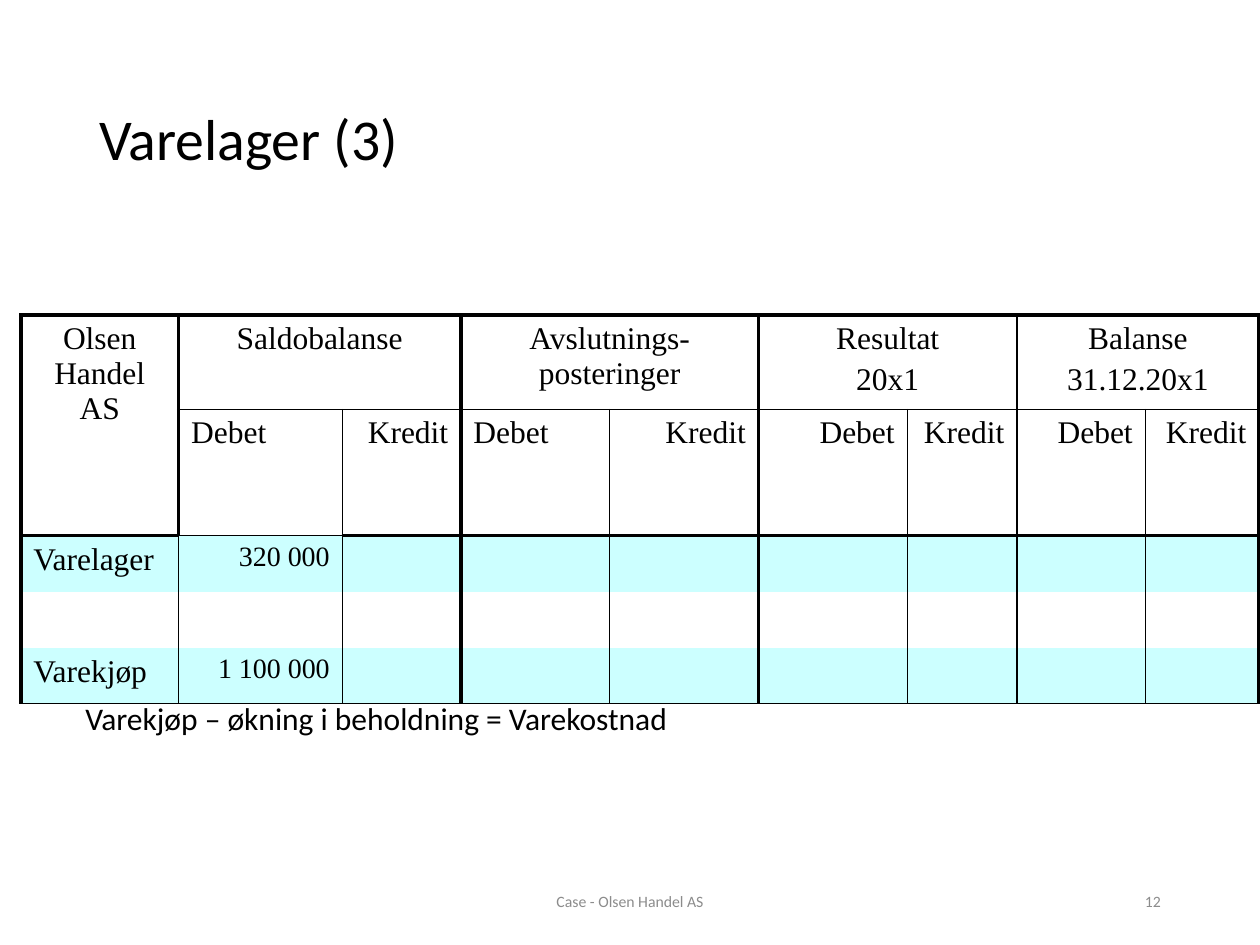
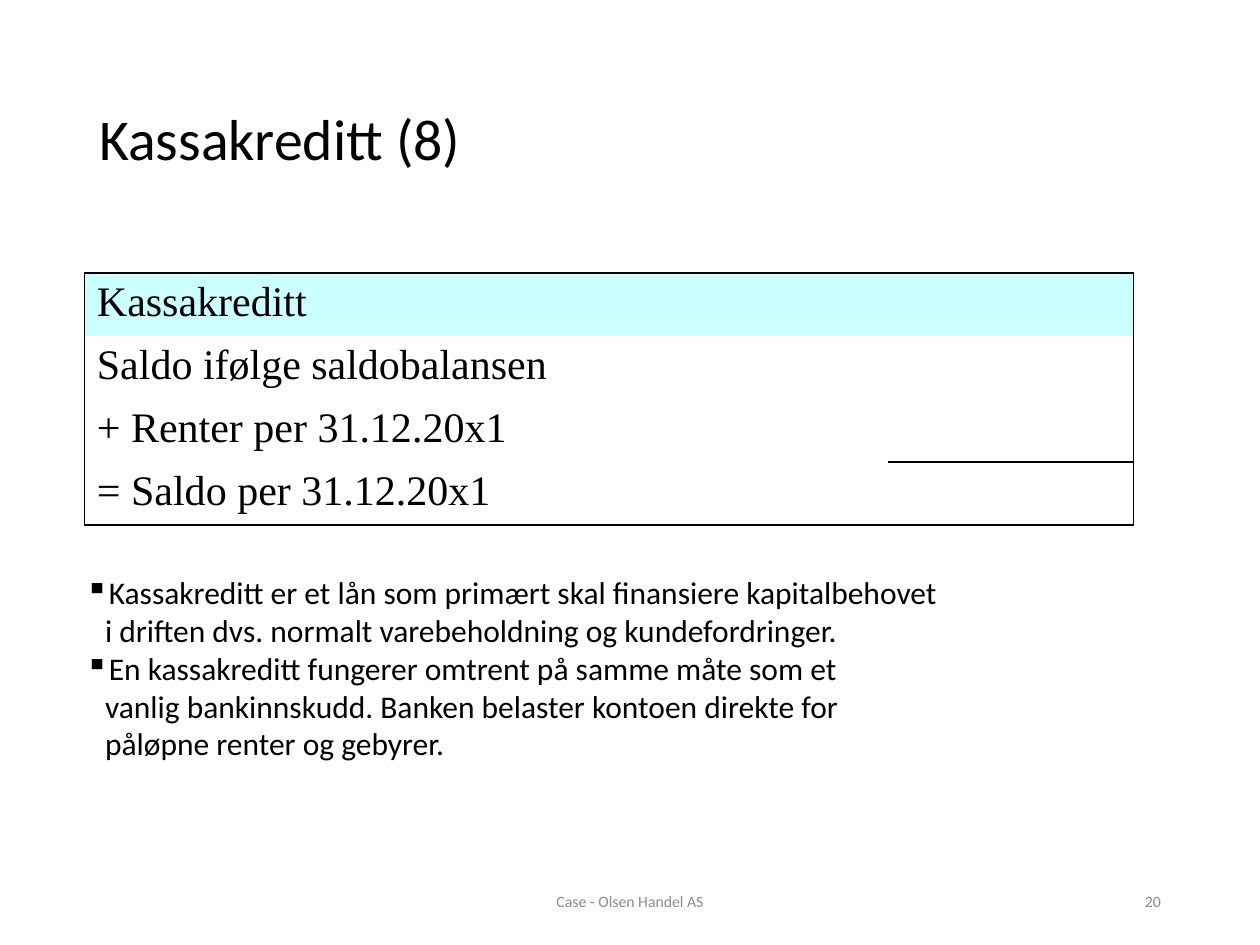
"""Build two accounting case slides: stock worksheet and bank overdraft."""
from lxml.etree import SubElement
from pptx import Presentation
from pptx.dml.color import RGBColor
from pptx.enum.text import MSO_ANCHOR as Anchor, PP_ALIGN as Align
from pptx.oxml.ns import qn
from pptx.util import Cm, Pt

colour = RGBColor.from_string
BLACK, GREY, AQUA = "000000", "8C8C8C", "CCFFFF"
SANS, SERIF = "Calibri", "Times New Roman"
THICK, THIN, NONE = 2.25, 1, 0
FOOTER = "Case - Olsen Handel AS"


def write_text(frame, text, size=18, font=SANS, color=BLACK, align=Align.LEFT,
               anchor=Anchor.TOP, line_spacing=None, space_before=0, bullet=None):
    frame.word_wrap = True
    frame.vertical_anchor = anchor
    for index, line in enumerate(text.split("\n")):
        paragraph = frame.paragraphs[0] if index == 0 else frame.add_paragraph()
        paragraph.text = line
        paragraph.alignment = align
        paragraph.line_spacing = line_spacing
        paragraph.space_before = Pt(space_before if index else 0)
        for run in paragraph.runs:
            run.font.size = Pt(size)
            run.font.name = font
            run.font.color.rgb = colour(color)
        if bullet:
            properties = paragraph._p.get_or_add_pPr()
            properties.set("marL", str(Cm(0.4)))
            properties.set("indent", str(-Cm(0.4)))
            SubElement(properties, qn("a:buChar"), char=bullet)


def format_cell(cell, left, right, top, bottom, fill=None):
    properties = cell._tc.get_or_add_tcPr()
    for side, width in zip("LRTB", (left, right, top, bottom)):
        line = SubElement(properties, qn(f"a:ln{side}"), w=str(Pt(width)))
        if width:
            solid = SubElement(line, qn("a:solidFill"))
            SubElement(solid, qn("a:srgbClr"), val=BLACK)
        else:
            SubElement(line, qn("a:noFill"))
    if fill:
        cell.fill.solid()
        cell.fill.fore_color.rgb = colour(fill)
    else:
        cell.fill.background()


presentation = Presentation()
presentation.slide_width, presentation.slide_height = Cm(25.4), Cm(19.05)

title_format = dict(size=33, anchor=Anchor.MIDDLE, line_spacing=0.9)
footer_format = dict(size=9, color=GREY, anchor=Anchor.MIDDLE)
pages = [
    ("Varelager (3)", "12", (0.42, 6.35),
     [3.18, 3.3, 2.39, 3, 3, 3, 2.21, 2.59, 2.29], [1.79, 2.36, 1.13, 1.13, 1.13],
     (1.47, 13.97, 14, 1.02), "Varekjøp – økning i beholdning = Varekostnad", None),
    ("Kassakreditt (8)", "20", (1.7, 5.5), [16.2, 4.95], [1.19] * 4,
     (1.47, 11.43, 23.1, 5.33),
     "Kassakreditt er et lån som primært skal finansiere kapitalbehovet\v"
     "i driften dvs. normalt varebeholdning og kundefordringer.\n"
     "En kassakreditt fungerer omtrent på samme måte som et\v"
     "vanlig bankinnskudd. Banken belaster kontoen direkte for\v"
     "påløpne renter og gebyrer.", "▪"),
]

tables = []
for title, number, corner, widths, heights, note_box, note, bullet in pages:
    slide = presentation.slides.add_slide(presentation.slide_layouts[6])
    for box, text, text_format in [
        ((1.75, 1.02, 21.9, 3.68), title, title_format),
        ((8.41, 17.65, 8.58, 1.02), FOOTER, dict(footer_format, align=Align.CENTER)),
        ((17.93, 17.65, 5.72, 1.02), number, dict(footer_format, align=Align.RIGHT)),
        (note_box, note, dict(bullet=bullet)),
    ]:
        shape = slide.shapes.add_textbox(*map(Cm, box))
        write_text(shape.text_frame, text, **text_format)

    size = sum(widths), sum(heights)
    table = slide.shapes.add_table(len(heights), len(widths),
                                   *map(Cm, corner + size)).table
    table.first_row = table.horz_banding = False
    for column, width in zip(table.columns, widths):
        column.width = Cm(width)
    for row, height in zip(table.rows, heights):
        row.height = Cm(height)
    tables.append(table)

worksheet, overdraft = tables

edges = [THICK, THIN, THIN, THICK, THIN, THICK, THIN, THIN, THIN, THICK]
header_edges = [THICK, THICK] + edges[2:]
for column in range(9):
    group = column - (column - 1) % 2
    debit_rule = THIN if column == 1 else THICK
    if column == 0:
        format_cell(worksheet.cell(0, 0), THICK, THICK, THICK, THICK)
        format_cell(worksheet.cell(1, 0), THICK, THICK, THICK, THICK)
    else:
        format_cell(worksheet.cell(0, column), header_edges[group],
                    header_edges[group + 2], THICK, THIN)
        format_cell(worksheet.cell(1, column), header_edges[column],
                    header_edges[column + 1], THIN, debit_rule)
    for row, top, bottom, fill in [(2, debit_rule, NONE, AQUA), (3, NONE, NONE, None),
                                   (4, NONE, THIN, AQUA)]:
        format_cell(worksheet.cell(row, column), edges[column], edges[column + 1],
                    top, bottom, fill)

worksheet.cell(0, 0).merge(worksheet.cell(1, 0))
write_text(worksheet.cell(0, 0).text_frame, "Olsen Handel AS", font=SERIF,
           align=Align.CENTER)
headings = ["Saldobalanse", "Avslutnings-posteringer", "Resultat\n20x1",
            "Balanse\n31.12.20x1"]
for index, heading in enumerate(headings):
    debit = 1 + 2 * index
    worksheet.cell(0, debit).merge(worksheet.cell(0, debit + 1))
    write_text(worksheet.cell(0, debit).text_frame, heading, font=SERIF,
               align=Align.CENTER, space_before=3.6)
    write_text(worksheet.cell(1, debit).text_frame, "Debet", font=SERIF,
               align=Align.LEFT if index < 2 else Align.RIGHT)
    write_text(worksheet.cell(1, debit + 1).text_frame, "Kredit", font=SERIF,
               align=Align.RIGHT)
for row, account, amount in [(2, "Varelager", "320 000"), (4, "Varekjøp", "1 100 000")]:
    write_text(worksheet.cell(row, 0).text_frame, account, font=SERIF)
    write_text(worksheet.cell(row, 1).text_frame, amount, size=16, font=SERIF,
               align=Align.RIGHT)

entries = ["Kassakreditt", "Saldo ifølge saldobalansen", "+ Renter per 31.12.20x1",
           "= Saldo per 31.12.20x1"]
for row, entry in enumerate(entries):
    top = THIN if row == 0 else NONE
    bottom = THIN if row == 3 else NONE
    fill = AQUA if row == 0 else None
    format_cell(overdraft.cell(row, 0), THIN, NONE, top, bottom, fill)
    format_cell(overdraft.cell(row, 1), NONE, THIN, THIN if row == 3 else top,
                THIN if row == 2 else bottom, fill)
    write_text(overdraft.cell(row, 0).text_frame, entry, size=24, font=SERIF)

presentation.save("out.pptx")
